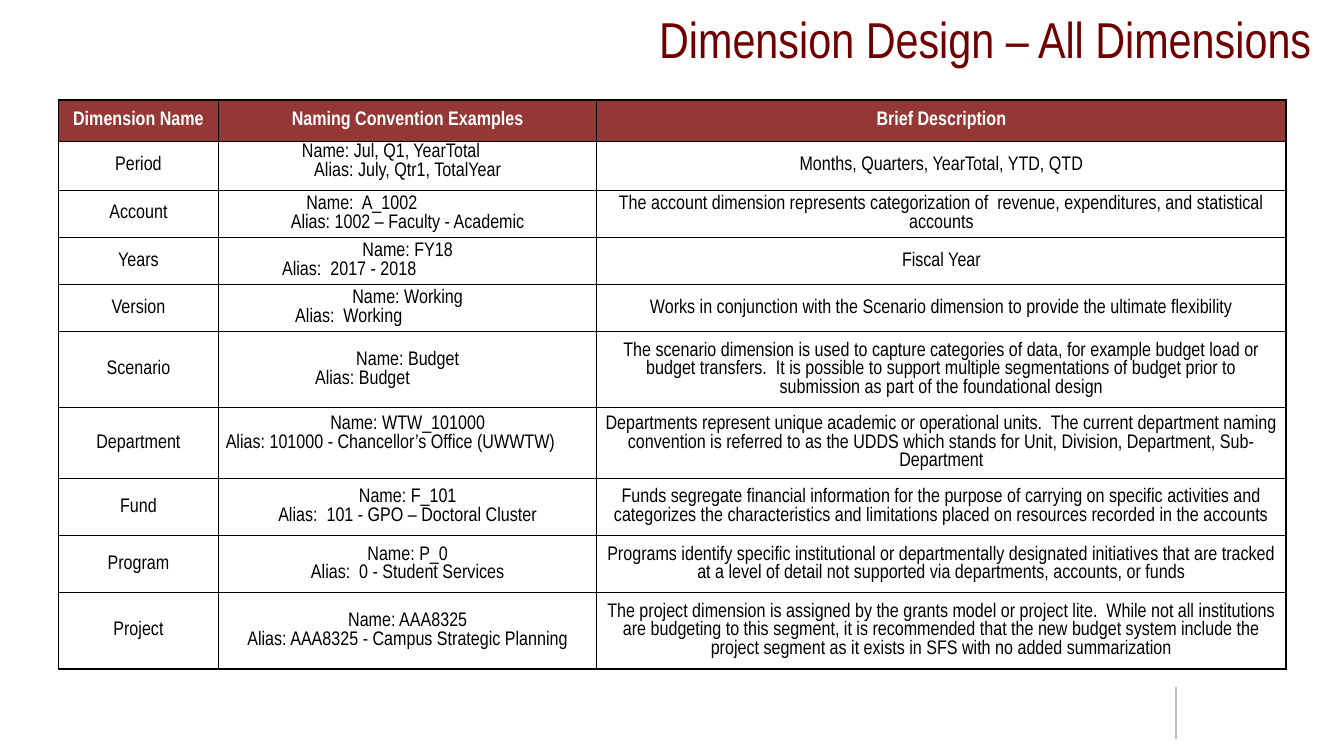
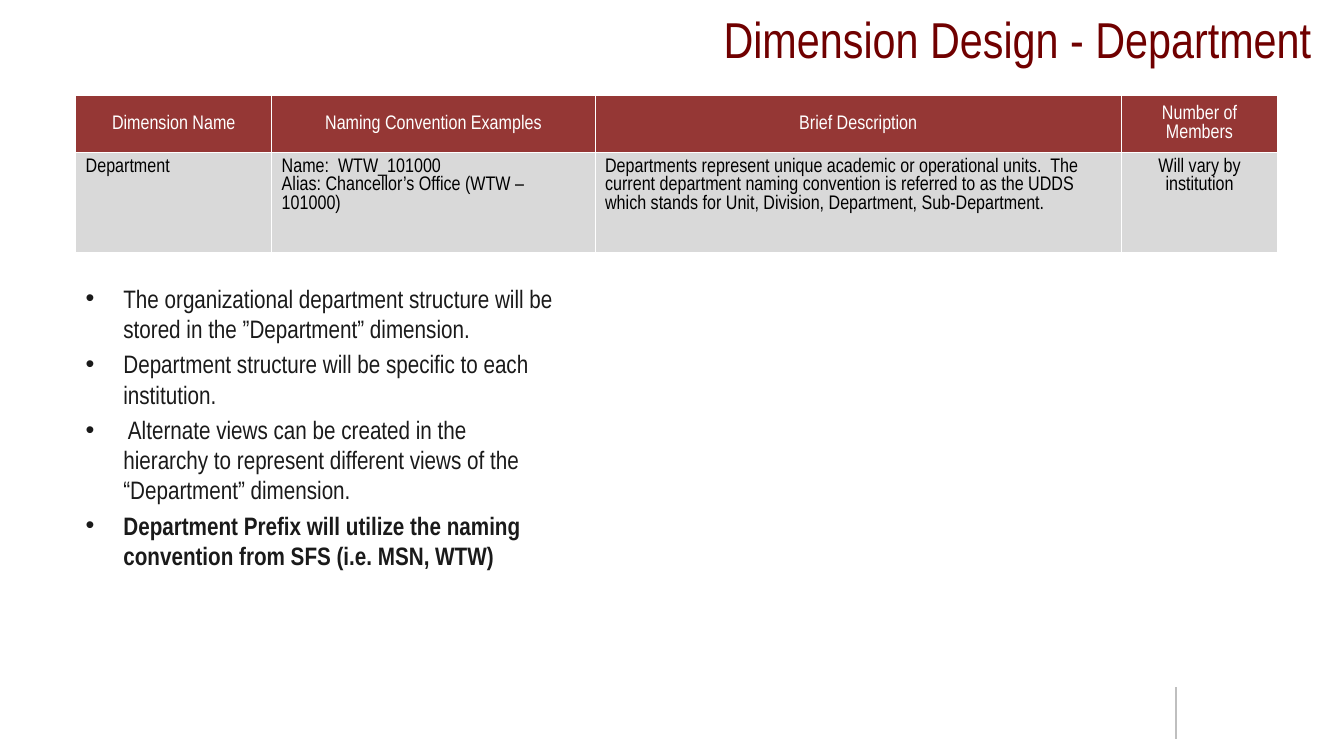
from lxml.etree import SubElement
from pptx import Presentation
from pptx.dml.color import RGBColor
from pptx.enum.shapes import MSO_CONNECTOR
from pptx.enum.text import MSO_ANCHOR, PP_ALIGN
from pptx.oxml.ns import qn
from pptx.util import Cm, Pt

COLORS = {
    "title": "700000",
    "header": "953735",
    "band": "D9D9D9",
    "rule": "BFBFBF",
    "bullet": "1A1A1A",
    "black": "000000",
    "white": "FFFFFF",
}
FONT = "Arial Narrow"
LEFT, CENTER = PP_ALIGN.LEFT, PP_ALIGN.CENTER


def add_run(paragraph, text, size, color, bold=False):
    run = paragraph.add_run()
    run.text = text
    run.font.name = FONT
    run.font.size = Pt(size)
    run.font.bold = bold
    run.font.color.rgb = RGBColor.from_string(COLORS[color])


def add_dimension_table(slide, left, top, widths, heights, rows, alignments,
                        border, margins, anchor, body_fill=None, bold_header=False):
    """Lengths are in cm. A cell is a string or a list of lines; a line given
    as (text, indent) is set flush left at that indent."""
    table = slide.shapes.add_table(len(rows), len(widths), Cm(left), Cm(top),
                                   Cm(sum(widths)), Cm(sum(heights))).table
    table.first_row = table.horz_banding = False
    for column, width in zip(table.columns, widths):
        column.width = Cm(width)
    for row, height in zip(table.rows, heights):
        row.height = Cm(height)

    for r, row in enumerate(rows):
        is_header = r == 0
        fill = "header" if is_header else body_fill
        for c, content in enumerate(row):
            cell = table.cell(r, c)
            cell.margin_left = cell.margin_right = Cm(margins[0])
            cell.margin_top = cell.margin_bottom = Cm(margins[1])
            cell.vertical_anchor = MSO_ANCHOR.MIDDLE if is_header else anchor

            properties = cell._tc.get_or_add_tcPr()
            for side in ("lnL", "lnR", "lnT", "lnB"):
                edge = SubElement(properties, qn(f"a:{side}"), w=str(Pt(1)))
                SubElement(SubElement(edge, qn("a:solidFill")), qn("a:srgbClr"),
                           val=COLORS[border])
            if fill:
                cell.fill.solid()
                cell.fill.fore_color.rgb = RGBColor.from_string(COLORS[fill])
            else:
                cell.fill.background()

            lines = [content] if isinstance(content, str) else content
            for i, line in enumerate(lines):
                frame = cell.text_frame
                paragraph = frame.add_paragraph() if i else frame.paragraphs[0]
                paragraph.alignment = CENTER if is_header else alignments[c]
                if isinstance(line, tuple):
                    line, indent = line
                    paragraph.alignment = LEFT
                    paragraph._p.get_or_add_pPr().set("marL", str(Cm(indent)))
                add_run(paragraph, line, 14, "white" if is_header else "black",
                        is_header and bold_header)
    return table


presentation = Presentation()
presentation.slide_width = Cm(33.87)
presentation.slide_height = Cm(19.05)

# Title and footer rule on every slide
slides = []
for title in ("Dimension Design – All Dimensions", "Dimension Design - Department"):
    slide = presentation.slides.add_slide(presentation.slide_layouts[6])
    slides.append(slide)

    footer_rule = slide.shapes.add_connector(
        MSO_CONNECTOR.STRAIGHT, Cm(29.63), Cm(17.32), Cm(29.63), Cm(18.61))
    footer_rule.line.color.rgb = RGBColor.from_string(COLORS["rule"])
    footer_rule.line.width = Pt(1.5)
    SubElement(footer_rule._element.spPr, qn("a:effectLst"))

    heading = slide.shapes.add_textbox(Cm(7.9), Cm(0.2), Cm(25.4), Cm(1.52)).text_frame
    heading.word_wrap = True
    heading.vertical_anchor = MSO_ANCHOR.MIDDLE
    heading.paragraphs[0].alignment = PP_ALIGN.RIGHT
    add_run(heading.paragraphs[0], title, 36, "title")

overview, department = slides
headers = ["Dimension Name", "Naming Convention Examples", "Brief Description"]
department_description = (
    "Departments represent unique academic or operational units.  The current "
    "department naming convention is referred to as the UDDS which stands for "
    "Unit, Division, Department, Sub-Department")

# Slide 1: all dimensions
dimensions = [
    headers,
    ["Period",
     [("Name: Jul, Q1, YearTotal", 1.92), "Alias: July, Qtr1, TotalYear"],
     "Months, Quarters, YearTotal, YTD, QTD"],
    ["Account",
     [("Name:  A_1002", 2.03), "Alias: 1002 – Faculty - Academic"],
     "The account dimension represents categorization of  revenue, expenditures, "
     "and statistical accounts"],
    ["Years",
     ["Name: FY18", ("Alias:  2017 - 2018", 1.42)],
     "Fiscal Year"],
    ["Version",
     ["Name: Working", ("Alias:  Working", 1.75)],
     "Works in conjunction with the Scenario dimension to provide the ultimate "
     "flexibility"],
    ["Scenario",
     ["Name: Budget", ("Alias: Budget", 2.25)],
     "The scenario dimension is used to capture categories of data, for example "
     "budget load or budget transfers.  It is possible to support multiple "
     "segmentations of budget prior to submission as part of the foundational design"],
    ["Department",
     ["Name: WTW_101000", ("Alias: 101000 - Chancellor’s Office (UWWTW)", 0)],
     department_description],
    ["Fund",
     ["Name: F_101", "Alias:  101 - GPO – Doctoral Cluster"],
     "Funds segregate financial information for the purpose of carrying on specific "
     "activities and categorizes the characteristics and limitations placed on "
     "resources recorded in the accounts"],
    ["Program",
     ["Name: P_0", "Alias:  0 - Student Services"],
     "Programs identify specific institutional or departmentally designated "
     "initiatives that are tracked at a level of detail not supported via "
     "departments, accounts, or funds"],
    ["Project",
     ["Name: AAA8325", "Alias: AAA8325 - Campus Strategic Planning"],
     "The project dimension is assigned by the grants model or project lite.  While "
     "not all institutions are budgeting to this segment, it is recommended that the "
     "new budget system include the project segment as it exists in SFS with no "
     "added summarization"],
]
dimension_table = add_dimension_table(
    overview, 1.47, 2.52, [4.04, 9.53, 17.37],
    [1.04] + [1.18] * 4 + [1.92, 1.74, 1.44, 1.44, 1.92], dimensions,
    [CENTER] * 3, "black", (0.18, 0), MSO_ANCHOR.MIDDLE, bold_header=True)
period_example = dimension_table.cell(1, 1)
period_example.vertical_anchor = MSO_ANCHOR.TOP
period_example.margin_top = Cm(0.05)
dimension_table.cell(6, 1).margin_bottom = Cm(0.46)

# Slide 2: department
add_dimension_table(
    department, 1.91, 2.4, [4.94, 8.15, 13.26, 3.94], [1.4, 2.51],
    [headers + ["Number of Members"],
     ["Department",
      ["Name:  WTW_101000", "Alias: Chancellor’s Office (WTW – 101000)"],
      department_description + ".",
      "Will vary by institution"]],
    [LEFT, LEFT, LEFT, CENTER], "white", (0.25, 0.13), MSO_ANCHOR.TOP,
    body_fill="band")

notes_on_structure = [
    ("The organizational department structure will be stored in the ”Department” "
     "dimension.", False),
    ("Department structure will be specific to each institution.", False),
    (" Alternate views can be created in the hierarchy to represent different views "
     "of the “Department” dimension.", False),
    ("Department Prefix will utilize the naming convention from SFS (i.e. MSN, WTW)",
     True),
]
structure = department.shapes.add_textbox(
    Cm(1.91), Cm(7.01), Cm(12.37), Cm(8.1)).text_frame
structure.word_wrap = True
for i, (text, bold) in enumerate(notes_on_structure):
    paragraph = structure.add_paragraph() if i else structure.paragraphs[0]
    properties = paragraph._p.get_or_add_pPr()
    properties.set("marL", str(Cm(0.95)))
    properties.set("indent", str(-Cm(0.95)))
    SubElement(properties, qn("a:buFont"), typeface="Arial")
    SubElement(properties, qn("a:buChar"), char="•")
    if i:
        paragraph.space_before = Pt(3.6)
    add_run(paragraph, text, 18, "bullet", bold)

presentation.save("out.pptx")
